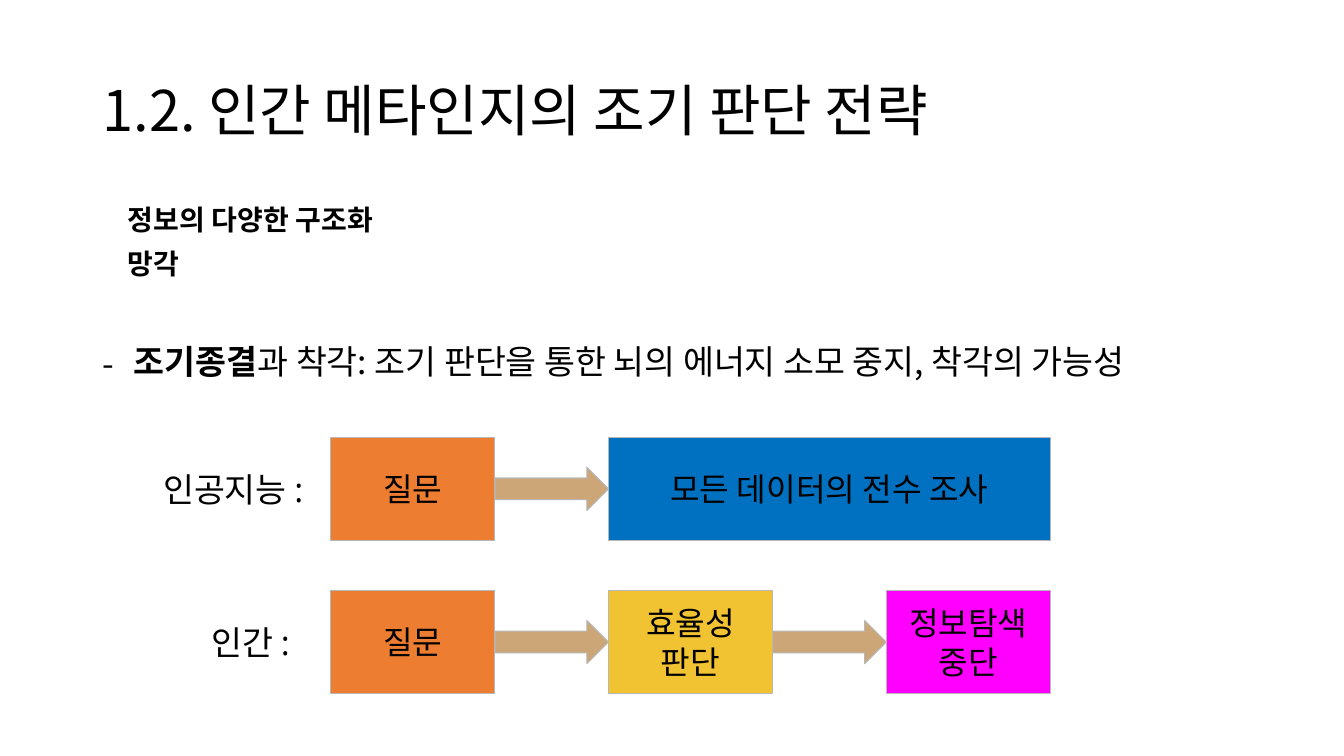
import pptx
import pptx.util
import pptx.dml.color
import pptx.enum.shapes
import pptx.enum.text
import pptx.oxml.ns
from lxml import etree

Inches = pptx.util.Inches
Pt = pptx.util.Pt
SHAPE = pptx.enum.shapes.MSO_SHAPE
ANCHOR = pptx.enum.text.MSO_ANCHOR
ALIGN = pptx.enum.text.PP_ALIGN
qn = pptx.oxml.ns.qn

COLORS = {
    "text": "000000", "border": "B7B7B7", "arrow": "CCA677",
    "question": "ED7D31", "search": "0070C0", "judge": "F1C232", "stop": "FF00FF",
}
HEAD_FONT = "Noto Sans CJK KR"
FLOW_FONT = "Open Sans"


def color(name):
    return pptx.dml.color.RGBColor.from_string(COLORS[name])


def add_run(p, text, font, size, bold=False):
    r = p.add_run()
    r.text = text
    for name, value in {"name": font, "size": Pt(size), "bold": bold}.items():
        setattr(r.font, name, value)
    r.font.color.rgb = color("text")
    ea = etree.SubElement(r.font._element, qn("a:ea"))
    ea.set("typeface", HEAD_FONT)


prs = pptx.Presentation()
prs.slide_width, prs.slide_height = Inches(13.33), Inches(7.5)
s = prs.slides.add_slide(prs.slide_layouts[6])

# Title
sp = s.shapes.add_textbox(Inches(0.92), Inches(0.4), Inches(11.5), Inches(1.45))
tf = sp.text_frame
tf.word_wrap = True
tf.vertical_anchor = ANCHOR.MIDDLE
p = tf.paragraphs[0]
p.line_spacing = 0.9
add_run(p, "1.2. 인간 메타인지의 조기 판단 전략", HEAD_FONT, 40)

# Body: left margin, indent, space before, size, runs with bold flag
body = [
    (0.25, 0, 0, 20, [("정보의 다양한 구조화", True)]),
    (0.25, 0, 10, 20, [("망각", True)]),
    (0.31, -0.33, 46, 24, [
        ("조기종결", True),
        ("과 착각: 조기 판단을 통한 뇌의 에너지 소모 중지, 착각의 가능성", False),
    ]),
]
sp = s.shapes.add_textbox(Inches(0.92), Inches(2), Inches(11.5), Inches(4.76))
tf = sp.text_frame
tf.word_wrap = True
for i, (margin, indent, before, size, runs) in enumerate(body):
    p = tf.add_paragraph() if i else tf.paragraphs[0]
    p.line_spacing = 0.9
    p.space_before = Pt(before)
    for text, bold in runs:
        add_run(p, text, HEAD_FONT, size, bold)
    pPr = p._p.get_or_add_pPr()
    pPr.set("marL", str(Inches(margin)))
    pPr.set("indent", str(Inches(indent)))
    if indent:
        etree.SubElement(pPr, qn("a:buFont")).set("typeface", HEAD_FONT)
        etree.SubElement(pPr, qn("a:buChar")).set("char", "-")

# Flow rows: label, label left, top, boxes as (text, fill, columns spanned)
BOX_LEFT, BOX_W, BOX_H, STEP = 3.28, 1.63, 1.02, 2.755
ARROW_W, ARROW_H = STEP - BOX_W, 0.43
flows = [
    ("인공지능 :", 1.52, 4.34,
     [("질문", "question", 1), ("모든 데이터의 전수 조사", "search", 2)]),
    ("인간 :", 2, 5.86,
     [("질문", "question", 1), ("효율성 판단", "judge", 1), ("정보탐색 중단", "stop", 1)]),
]
for label, label_left, top, boxes in flows:
    sp = s.shapes.add_textbox(Inches(label_left), Inches(top + 0.21), Inches(1.76), Inches(0.61))
    tf = sp.text_frame
    tf.margin_top = tf.margin_bottom = Inches(0.1)
    add_run(tf.paragraphs[0], label, FLOW_FONT, 24)

    for i, (text, fill, span) in enumerate(boxes):
        left = BOX_LEFT + i * STEP
        width = BOX_W + (span - 1) * STEP
        parts = [(SHAPE.RECTANGLE, left, top, width, BOX_H, fill, text)]
        if i:
            parts.append((SHAPE.RIGHT_ARROW, left - ARROW_W, top + 0.295,
                          ARROW_W, ARROW_H, "arrow", ""))
        for kind, x, y, w, h, name, words in parts:
            sp = s.shapes.add_shape(kind, Inches(x), Inches(y), Inches(w), Inches(h))
            sp.shadow.inherit = False
            sp.fill.solid()
            sp.fill.fore_color.rgb = color(name)
            sp.line.color.rgb = color("border")
            sp.line.width = Pt(0.75)
            if words:
                tf = sp.text_frame
                tf.word_wrap = True
                tf.vertical_anchor = ANCHOR.MIDDLE
                tf.margin_top = tf.margin_bottom = Inches(0.1)
                tf.paragraphs[0].alignment = ALIGN.CENTER
                add_run(tf.paragraphs[0], words, FLOW_FONT, 23)

prs.save("out.pptx")
